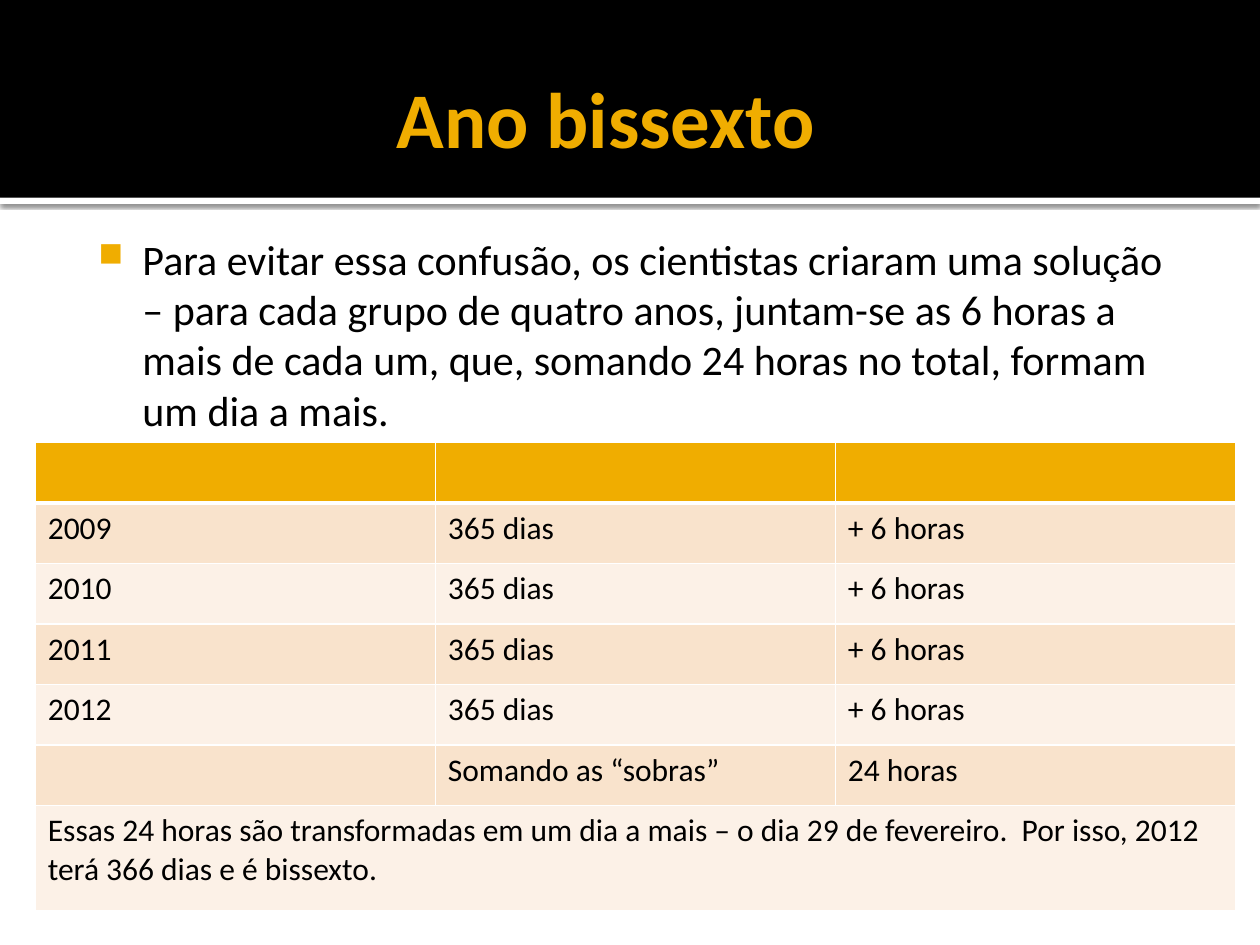
from lxml.etree import SubElement
from pptx import Presentation
from pptx.dml.color import RGBColor
from pptx.enum.shapes import MSO_SHAPE as Shape
from pptx.enum.text import MSO_ANCHOR as Anchor
from pptx.oxml.ns import qn
from pptx.util import Pt

# Content
TITLE = "Ano bissexto"
BODY = ("Para evitar essa confusão, os cientistas criaram uma solução – para cada "
        "grupo de quatro anos, juntam-se as 6 horas a mais de cada um, que, somando "
        "24 horas no total, formam um dia a mais.")
YEARS = ["2009", "2010", "2011", "2012"]
FOOTER = ("Essas 24 horas são transformadas em um dia a mais – o dia 29 de fevereiro.  "
          "Por isso, 2012 terá 366 dias e é bissexto.")
ROWS = [
    ("", "", ""),
    *[(year, "365 dias", "+ 6 horas") for year in YEARS],
    ("", "Somando as “sobras”", "24 horas"),
    (FOOTER, "", ""),
]

# Style, lengths in points
FONT = "Calibri"
GOLD, BLACK, WHITE = "F0AD00", "000000", "FFFFFF"
BANDS = ["FCF1E7", "F9E3CC"]
WIDTH, HEIGHT, BANNER = 720, 540, 113
COLUMN, ROW, LAST_ROW = 228.6, 34.56, 60.2


def color(value):
    return RGBColor.from_string(value)


def add_child(parent, tag, **attributes):
    return SubElement(parent, qn(tag), {k: str(v) for k, v in attributes.items()})


def add_span(para, text, size, value, bold=False):
    span = para.add_run()
    span.text = text
    span.font.name, span.font.size, span.font.bold = FONT, Pt(size), bold
    span.font.color.rgb = color(value)


def add_bar(top, height, value):
    bar = page.shapes.add_shape(Shape.RECTANGLE, 0, Pt(top), Pt(WIDTH), Pt(height))
    bar.shadow.inherit = False
    bar.fill.solid()
    bar.fill.fore_color.rgb = color(value)
    bar.line.fill.background()
    return bar


def add_text_box(left, top, width, height, margins):
    box = page.shapes.add_textbox(Pt(left), Pt(top), Pt(width), Pt(height))
    frame = box.text_frame
    frame.word_wrap = True
    (frame.margin_left, frame.margin_top,
     frame.margin_right, frame.margin_bottom) = map(Pt, margins)
    return frame


def add_borders(cell, bottom):
    properties = cell._tc.get_or_add_tcPr()
    for side, width in (("L", 1), ("R", 1), ("T", 1), ("B", bottom)):
        line = add_child(properties, "a:ln" + side, w=Pt(width))
        add_child(add_child(line, "a:solidFill"), "a:srgbClr", val=WHITE)


deck = Presentation()
deck.slide_width, deck.slide_height = Pt(WIDTH), Pt(HEIGHT)
page = deck.slides.add_slide(deck.slide_layouts[6])

# Banner with a shadowed white strip below it
strip = add_bar(BANNER, 3.6, WHITE)
effects = strip._element.spPr.find(qn("a:effectLst"))
shadow = add_child(effects, "a:outerShdw", blurRad=Pt(2.5), dist=Pt(0.8),
                   dir=5400000, algn="tl", rotWithShape=0)
add_child(add_child(shadow, "a:srgbClr", val=BLACK), "a:alpha", val=60000)
add_bar(0, BANNER, BLACK)

# Title
frame = add_text_box(219.6, 21.6, 464.4, 90, (7.2, 3.6, 3.6, 3.6))
frame.vertical_anchor = Anchor.MIDDLE
add_span(frame.paragraphs[0], TITLE, 45, GOLD, bold=True)

# Bulleted paragraph
frame = add_text_box(42.5, 126, 641.5, 138.2, (4.3, 7.2, 7.2, 3.6))
para = frame.paragraphs[0]
bullet = para._p.get_or_add_pPr()
bullet.set("marL", str(Pt(34.6)))
bullet.set("indent", str(Pt(-25.2)))
add_child(add_child(bullet, "a:buClr"), "a:srgbClr", val=GOLD)
add_child(bullet, "a:buSzPct", val=80000)
add_child(bullet, "a:buChar", char="■")
add_span(para, BODY, 24, BLACK)

# Table
heights = [ROW] * (len(ROWS) - 1) + [LAST_ROW]
columns = len(ROWS[0])
table = page.shapes.add_table(len(ROWS), columns, Pt(20.16), Pt(252.9),
                              Pt(COLUMN * columns), Pt(sum(heights))).table
for column in table.columns:
    column.width = Pt(COLUMN)
for index, (texts, height) in enumerate(zip(ROWS, heights)):
    table.rows[index].height = Pt(height)
    for cell, text in zip(table.rows[index].cells, texts):
        add_borders(cell, bottom=1 if index else 3)
        cell.fill.solid()
        cell.fill.fore_color.rgb = color(BANDS[index % 2] if index else GOLD)
        if text:
            add_span(cell.text_frame.paragraphs[0], text, 18, BLACK)
last = len(ROWS) - 1
table.cell(last, 0).merge(table.cell(last, columns - 1))

deck.save("out.pptx")
